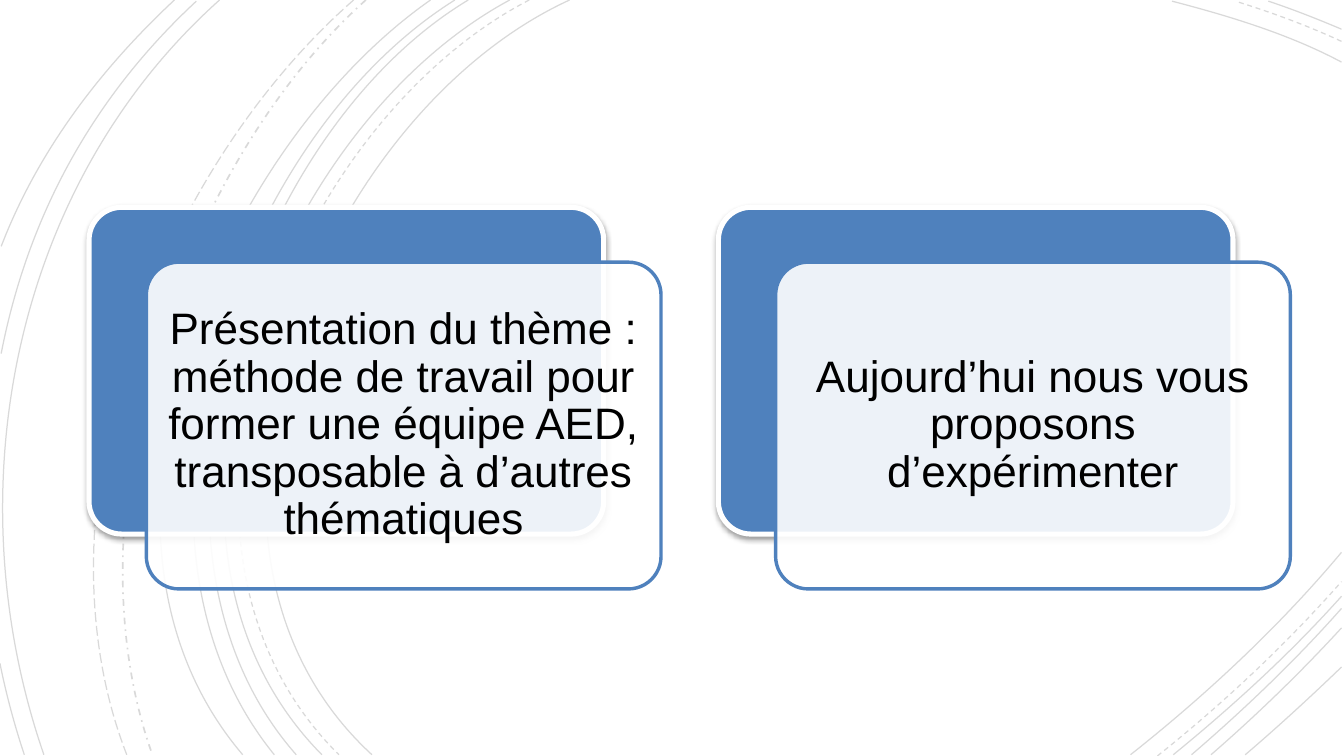
import lxml.etree
import pptx
import pptx.dml.color
import pptx.enum.dml
import pptx.enum.shapes
import pptx.enum.text
import pptx.oxml.ns
import pptx.util

Inches, Pt = pptx.util.Inches, pptx.util.Pt
qn = pptx.oxml.ns.qn
DASH = pptx.enum.dml.MSO_LINE
SOLID = DASH.SOLID
BLUE, WHITE, BLACK = "4F81BD", "FFFFFF", "000000"

# Background arcs: dash, line width, then start, two control points and end
ARCS = [
    # Left side, from the inside outwards
    (SOLID, 0.75, (4.67, 0), (2.6, 0.95), (1.18, 4.47), (3.05, 6.19)),
    (DASH.DASH, 0.75, (4.34, 0), (2.35, 1.03), (1.01, 4.44), (2.78, 6.19)),
    (SOLID, 0.75, (4.18, 0), (2.23, 1.05), (0.91, 4.44), (2.64, 6.19)),
    (SOLID, 0.75, (3.84, 0), (2.01, 1.1), (0.91, 4.47), (2.43, 6.19)),
    (SOLID, 0.75, (3.73, 0), (1.91, 1.14), (0.8, 4.41), (2.25, 6.19)),
    (SOLID, 0.75, (3.53, 0), (1.8, 1.21), (0.44, 4.37), (1.99, 6.19)),
    (DASH.DASH_DOT, 1, (3, 0), (1.46, 1.38), (0.54, 4.21), (1.25, 6.19)),
    (DASH.LONG_DASH, 0.75, (2.9, 0), (1.3, 1.4), (0.24, 4.13), (1.04, 6.19)),
    (SOLID, 0.75, (1.8, 0), (0.09, 1.53), (-0.38, 4.05), (0.36, 6.19)),
    (SOLID, 0.75, (1.61, 0.01), (0.76, 0.8), (0.23, 1.77), (0.01, 2.9)),
    (SOLID, 0.75, (0, 5.44), (0.05, 5.69), (0.12, 5.95), (0.2, 6.19)),
    (SOLID, 0.75, (1.43, 0), (0.82, 0.57), (0.31, 1.24), (0.01, 2.02)),
    # Top right corner
    (SOLID, 0.75, (11, 0.51), (10.57, 0.28), (10.07, 0.13), (9.61, 0.01)),
    (DASH.DASH, 0.75, (11, 0.34), (10.72, 0.21), (10.42, 0.1), (10.13, 0.01)),
    (SOLID, 0.75, (11, 0.24), (10.81, 0.16), (10.61, 0.08), (10.4, 0.01)),
    # Bottom right corner
    (SOLID, 0.75, (9.27, 6.19), (9.89, 5.7), (10.49, 5.14), (11, 4.53)),
    (DASH.DASH, 0.75, (9.49, 6.2), (10.03, 5.77), (10.54, 5.29), (11, 4.77)),
    (SOLID, 0.75, (9.62, 6.19), (10.11, 5.79), (10.58, 5.36), (11, 4.89)),
    (SOLID, 0.75, (9.77, 6.19), (10.2, 5.82), (10.62, 5.42), (11, 4.99)),
    (SOLID, 0.75, (9.93, 6.19), (10.31, 5.86), (10.67, 5.51), (11, 5.15)),
    (SOLID, 0.75, (10.21, 6.19), (10.48, 5.96), (10.74, 5.72), (11, 5.47)),
]

CARDS = [
    "Présentation du thème\u00a0: méthode de travail pour former une équipe AED, "
    "transposable à d’autres thématiques",
    "Aujourd’hui nous vous proposons d’expérimenter",
]
CARD_W, CARD_H = 4.22, 2.68
CARD_LEFT, CARD_TOP, CARD_STEP = 0.73, 1.7, 5.16
FRONT_DX, FRONT_DY = 0.47, 0.45


def color(value):
    return pptx.dml.color.RGBColor.from_string(value)


def set_alpha(fill_parent, percent):
    clr = fill_parent.find(qn("a:solidFill")).find(qn("a:srgbClr"))
    lxml.etree.SubElement(clr, qn("a:alpha"), val=str(percent * 1000))


def set_line(s, value, width, dash=SOLID):
    s.line.color.rgb = color(value)
    s.line.width = Pt(width)
    s.line.dash_style = dash


def add_shadow(s):
    effects = s._element.spPr.find(qn("a:effectLst"))
    shadow = lxml.etree.SubElement(
        effects, qn("a:outerShdw"), blurRad=str(Pt(3.1)), dist=str(Pt(1.6)),
        dir=str(90 * 60000), rotWithShape="0")
    clr = lxml.etree.SubElement(shadow, qn("a:srgbClr"), val=BLACK)
    lxml.etree.SubElement(clr, qn("a:alpha"), val="38000")


def bend(s):
    """Turn the three straight segments of an outline into one cubic curve."""
    segments = list(s._element.iter(qn("a:lnTo")))
    outline = segments[0].getparent()
    curve = lxml.etree.SubElement(outline, qn("a:cubicBezTo"))
    for segment in segments:
        curve.append(segment[0])
        outline.remove(segment)


def add_arc(slide, dash, width, *points):
    start, *rest = [(Inches(x), Inches(y)) for x, y in points]
    builder = slide.shapes.build_freeform(*start)
    builder.add_line_segments(rest, close=False)
    s = builder.convert_to_shape()
    bend(s)
    s.shadow.inherit = False
    s.fill.background()
    set_line(s, BLACK, width, dash)
    set_alpha(s._element.spPr.find(qn("a:ln")), 15)


def add_box(slide, left, top, fill, line, width):
    s = slide.shapes.add_shape(
        pptx.enum.shapes.MSO_SHAPE.ROUNDED_RECTANGLE,
        Inches(left), Inches(top), Inches(CARD_W), Inches(CARD_H))
    s.adjustments[0] = 0.1
    s.shadow.inherit = False
    s.fill.solid()
    s.fill.fore_color.rgb = color(fill)
    set_line(s, line, width)
    return s


def set_text(s, text, size=26, font="Arial", value=BLACK, inset=0.03):
    tf = s.text_frame
    tf.word_wrap = True
    tf.vertical_anchor = pptx.enum.text.MSO_ANCHOR.MIDDLE
    tf.margin_left = tf.margin_right = Inches(inset)
    tf.margin_top = tf.margin_bottom = Inches(inset)
    p = tf.paragraphs[0]
    p.alignment = pptx.enum.text.PP_ALIGN.CENTER
    p.line_spacing = 0.9
    r = p.add_run()
    r.text = text
    r.font.size = Pt(size)
    r.font.name = font
    r.font.color.rgb = color(value)


def add_card(slide, left, top, text):
    back = add_box(slide, left, top, BLUE, WHITE, 3)
    add_shadow(back)
    front = add_box(slide, left + FRONT_DX, top + FRONT_DY, WHITE, BLUE, 2)
    set_alpha(front._element.spPr, 90)
    set_text(front, text)


def main():
    prs = pptx.Presentation()
    prs.slide_width, prs.slide_height = Inches(11.02), Inches(6.2)
    slide = prs.slides.add_slide(prs.slide_layouts[6])

    # Background
    for arc in ARCS:
        add_arc(slide, *arc)

    # Cards
    for i, text in enumerate(CARDS):
        add_card(slide, CARD_LEFT + i * CARD_STEP, CARD_TOP, text)

    prs.save("out.pptx")


if __name__ == "__main__":
    main()
